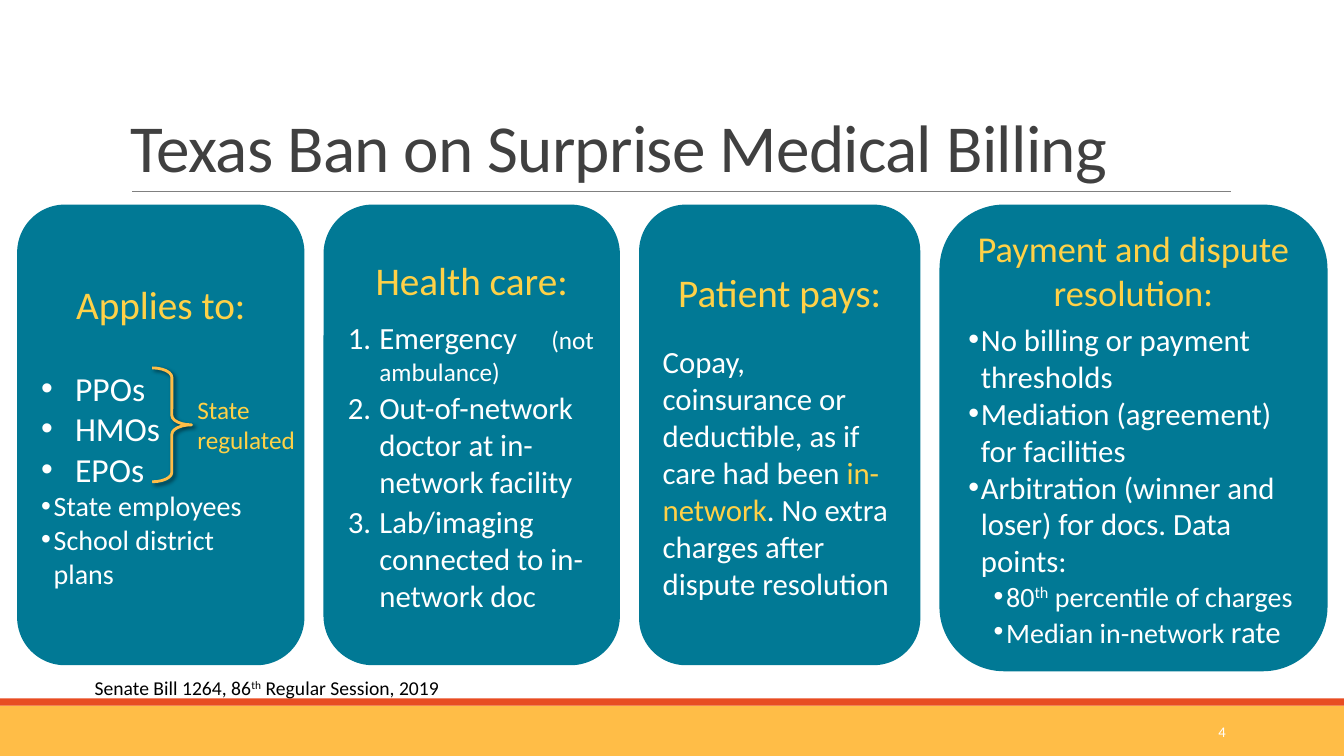
"""Build the slide on the Texas ban on surprise medical billing."""
import pptx
import pptx.util
import pptx.dml.color
import pptx.enum.shapes
import pptx.enum.text
import pptx.oxml
import pptx.oxml.ns

Pt = pptx.util.Pt
KIND = pptx.enum.shapes.MSO_SHAPE
ALIGN = pptx.enum.text.PP_ALIGN
ANCHOR = pptx.enum.text.MSO_ANCHOR
NS = pptx.oxml.ns.nsdecls("a")
COLORS = {
    "teal": "017995", "gold": "FFD147", "amber": "FFBD47", "red": "E84C22",
    "gray": "808080", "dark": "404040", "white": "FFFFFF", "black": "000000",
}
BULLET = '<a:buFont %s typeface="Arial"/>' % NS, '<a:buChar %s char="•"/>' % NS
NUMBER = ('<a:buAutoNum %s type="arabicPeriod"/>' % NS,)
SHADOW = (
    '<a:effectLst %s><a:outerShdw blurRad="38100" dist="25400" dir="2700000">'
    '<a:srgbClr val="000000"><a:alpha val="60000"/></a:srgbClr>'
    '</a:outerShdw></a:effectLst>' % NS
)


class Deck:
    """Hold the style and the current slide."""

    def __init__(self, font):
        self.font = font
        self.file = pptx.Presentation()
        self.file.slide_width, self.file.slide_height = Pt(960), Pt(540)
        self.slide = self.file.slides.add_slide(self.file.slide_layouts[6])

    def color(self, name):
        return pptx.dml.color.RGBColor.from_string(COLORS[name])

    def shape(self, kind, x, y, w, h, fill):
        shape = self.slide.shapes.add_shape(kind, Pt(x), Pt(y), Pt(w), Pt(h))
        shape.shadow.inherit = False
        shape.fill.solid()
        shape.fill.fore_color.rgb = self.color(fill)
        shape.line.fill.background()
        return shape

    def rule(self, x, y, end):
        line = self.slide.shapes.add_connector(
            pptx.enum.shapes.MSO_CONNECTOR.STRAIGHT, Pt(x), Pt(y), Pt(end), Pt(y))
        line.line.color.rgb = self.color("gray")
        line.line.width = Pt(0.5)
        line._element.spPr.append(pptx.oxml.parse_xml("<a:effectLst %s/>" % NS))

    def brace(self, x, y, w, h):
        brace = self.shape(KIND.RIGHT_BRACE, x, y, w, h, "amber")
        brace.fill.background()
        brace.adjustments[0] = 0.24
        brace.line.color.rgb = self.color("amber")
        brace.line.width = Pt(2)
        props = brace._element.spPr
        props.remove(props.find(pptx.oxml.ns.qn("a:effectLst")))
        props.append(pptx.oxml.parse_xml(SHADOW))

    def style(self, para, runs, size, color):
        for item in runs:
            text, extra = (item, {}) if isinstance(item, str) else item
            run = para.add_run()
            run.text = text
            run.font.name = self.font
            run.font.size = Pt(extra.get("size", size))
            run.font.color.rgb = self.color(extra.get("color", color))
            for key in ("baseline", "spc"):
                if key in extra:
                    run._r.get_or_add_rPr().set(key, str(extra[key]))

    def text(self, x, y, w, h, runs, size, color, align=ALIGN.LEFT, anchor=ANCHOR.TOP):
        box = self.slide.shapes.add_textbox(Pt(x), Pt(y), Pt(w), Pt(h))
        box.text_frame.word_wrap = True
        box.text_frame.vertical_anchor = anchor
        para = box.text_frame.paragraphs[0]
        para.alignment = align
        self.style(para, runs, size, color)
        return para

    def card(self, x, w, h, head, size, gap, items):
        frame = self.shape(KIND.ROUNDED_RECTANGLE, x, 146.16, w, h, "teal").text_frame
        frame.word_wrap = True
        frame.vertical_anchor = ANCHOR.MIDDLE
        title = frame.paragraphs[0]
        title.alignment = ALIGN.CENTER
        title.space_after = Pt(gap)
        self.style(title, [head], size, "gold")
        for runs, size, mark, left, hang, after in items:
            para = frame.add_paragraph()
            para.alignment = ALIGN.LEFT
            para.space_after = Pt(after)
            props = para._p.get_or_add_pPr()
            props.set("marL", str(Pt(left)))
            props.set("indent", str(Pt(-hang)))
            for part in mark:
                props.append(pptx.oxml.parse_xml(part))
            self.style(para, runs, size, "white")


def main():
    deck = Deck("Calibri")
    deck.shape(KIND.RECTANGLE, 0, 504, 960, 36, "amber")
    deck.shape(KIND.RECTANGLE, 0, 498.96, 960, 5.04, "red")
    deck.rule(94.32, 136.8, 879.12)
    title = deck.text(86.4, 22.32, 792, 114.48,
                      [("Texas Ban on Surprise Medical Billing", {"spc": -50})],
                      48, "dark", anchor=ANCHOR.BOTTOM)
    title.line_spacing = 0.85
    deck.text(779.76, 508.32, 102.96, 28.8, ["4"], 10.5, "white",
              ALIGN.RIGHT, ANCHOR.MIDDLE)

    plans = [([name], 24, BULLET, 24.3, 24.3, 0) for name in ("PPOs", "HMOs", "EPOs")]
    plans += [([name], 20, BULLET, 9, 9, 0)
              for name in ("State employees", "School district plans")]
    care = [
        (["Emergency", (" ", {"spc": 1950}), ("(not ambulance)", {"size": 18})],
         22, NUMBER, 22.5, 22.5, 2),
        (["Out-of-network doctor at in-network facility"], 22, NUMBER, 22.5, 22.5, 2),
        (["Lab/imaging connected to in-network doc"], 22, NUMBER, 22.5, 22.5, 0),
    ]
    pays = [(["Copay, coinsurance or deductible, as if care had been ",
              ("in-network", {"color": "gold"}),
              ". No extra charges after dispute resolution"], 22, (), 0, 0, 0)]
    dispute = [([name], 22, BULLET, 9, 9, 0) for name in (
        "No billing or payment thresholds",
        "Mediation (agreement) for facilities",
        "Arbitration (winner and loser) for docs. Data points:")]
    dispute += [(runs, 20, BULLET, 27, 9, 0) for runs in (
        ["80", ("th", {"baseline": 30000}), " percentile of charges"],
        ["Median in-network ", ("rate", {"size": 22})])]

    x = 12.24
    for w, h, head, size, gap, items in (
            (205.2, 329.04, "Applies to:", 28, 29, plans),
            (211.68, 329.04, "Health care:", 28, 11, care),
            (200.88, 329.04, "Patient pays:", 28, 19.5, pays),
            (277.2, 333.36, "Payment and dispute resolution:", 26, 5, dispute)):
        deck.card(x, w, h, head, size, gap, items)
        x += w + 13.68

    deck.brace(108.72, 262.8, 28.08, 81.36)
    deck.text(133.92, 277.92, 85.68, 51.12, ["State regulated"], 18, "gold")
    deck.text(60.48, 479.52, 287.28, 24.48,
              ["Senate Bill 1264, 86", ("th", {"baseline": 30000}),
               " Regular Session, 2019"], 14, "black")
    deck.file.save("out.pptx")


if __name__ == "__main__":
    main()
